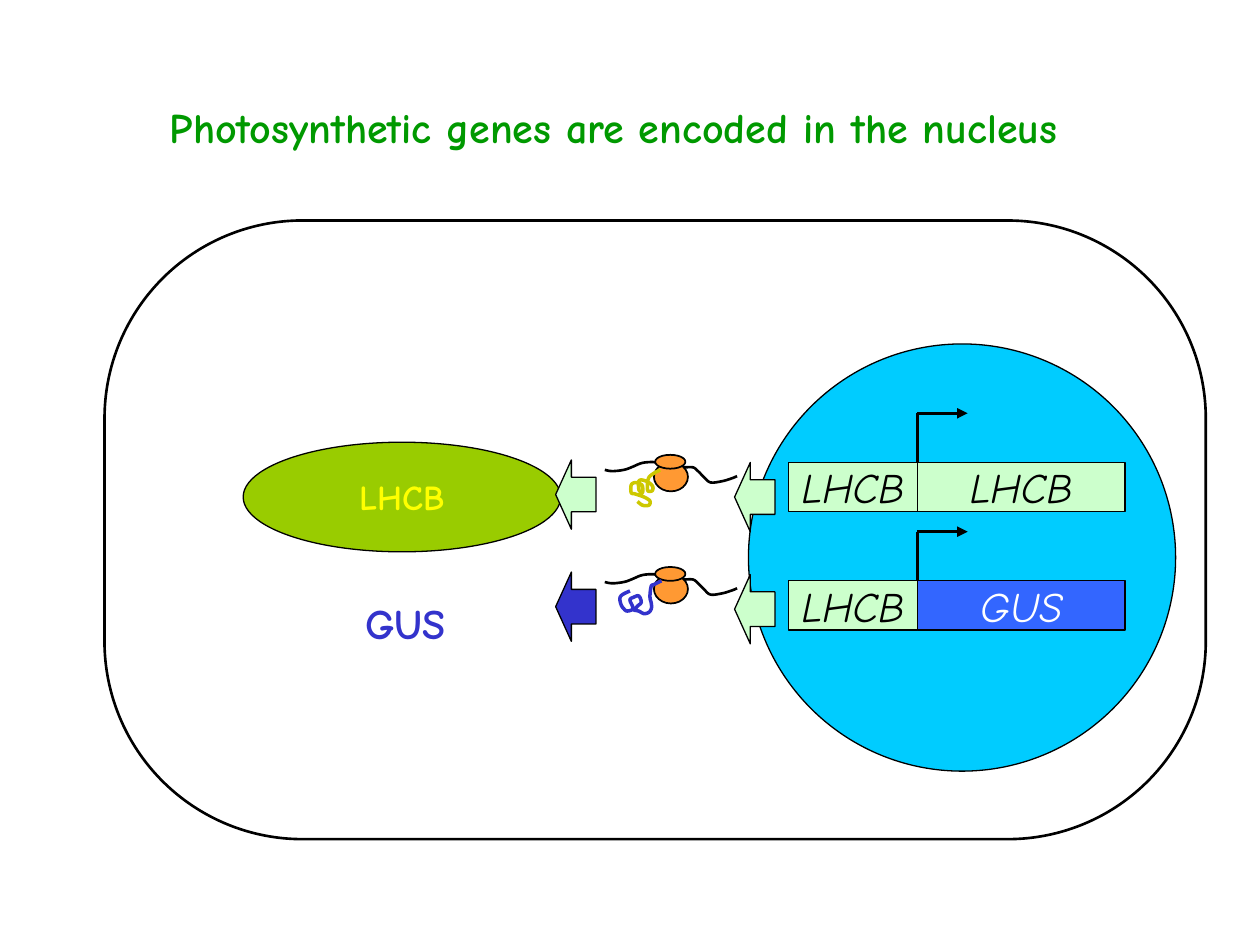
"""Draw a cell whose nucleus holds two gene constructs and their products."""
from dataclasses import dataclass
from typing import Optional

from lxml.etree import SubElement
from pptx import Presentation
from pptx.dml.color import RGBColor
from pptx.enum.shapes import MSO_CONNECTOR, MSO_SHAPE
from pptx.enum.text import MSO_ANCHOR, MSO_AUTO_SIZE, PP_ALIGN
from pptx.oxml.ns import qn
from pptx.util import Cm, Pt

FONT = "Comic Neue"
BLACK, WHITE, MINT, BLUE = "000000", "FFFFFF", "CCFFCC", "3333CC"
ORANGE = "FF9933"
INCH = 2.54

MRNA = [
    (4.8, 3.73), (4.86, 3.74), (4.95, 3.73), (5.01, 3.71), (5.08, 3.68),
    (5.13, 3.67), (5.2, 3.67), (5.26, 3.7), (5.3, 3.71), (5.42, 3.71),
    (5.5, 3.71), (5.54, 3.74), (5.59, 3.79), (5.64, 3.83), (5.73, 3.82),
    (5.8, 3.8), (5.85, 3.78),
]
LHCB_CHAIN = [
    (5.24, 3.73), (5.2, 3.75), (5.17, 3.77), (5.15, 3.79), (5.14, 3.83),
    (5.14, 3.89), (5.16, 3.9), (5.18, 3.89), (5.18, 3.86), (5.15, 3.83),
    (5.1, 3.81), (5.07, 3.82), (5.07, 3.88), (5.08, 3.9), (5.1, 3.91),
    (5.1, 3.86), (5.08, 3.84), (5.04, 3.83), (5.01, 3.85), (5.01, 3.91),
    (5.04, 3.92), (5.1, 3.94), (5.14, 3.96), (5.16, 3.98), (5.15, 4.01),
    (5.1, 4.01), (5.06, 3.98),
]
GUS_CHAIN = [
    (5.25, 4.61), (5.19, 4.64), (5.17, 4.65), (5.16, 4.71), (5.16, 4.75),
    (5.17, 4.79), (5.17, 4.83), (5.15, 4.86), (5.11, 4.87), (5.07, 4.85),
    (5.03, 4.84), (5.02, 4.81), (5, 4.76), (5.03, 4.74), (5.07, 4.73),
    (5.09, 4.78), (5.06, 4.81), (5.04, 4.83), (4.98, 4.85), (4.95, 4.83),
    (4.93, 4.8), (4.92, 4.75), (4.94, 4.72), (5, 4.69),
]


@dataclass
class Label:
    text: str
    color: str
    size: float = 24
    bold: bool = False
    italic: bool = False


@dataclass
class Row:
    gene: Label
    fill: str
    top: float
    drop: float
    arrow: str
    chain: list
    tint: str


def cm(inch: float) -> Cm:
    return Cm(inch * INCH)


def rgb(code: str) -> RGBColor:
    return RGBColor.from_string(code)


def write(frame, label: Label) -> None:
    run = frame.paragraphs[0].add_run()
    run.text = label.text
    font = run.font
    font.name, font.size = FONT, Pt(label.size)
    font.bold, font.italic = label.bold, label.italic
    font.color.rgb = rgb(label.color)


def add_text(slide, x: float, y: float, wide: float, label: Label) -> None:
    frame = slide.shapes.add_textbox(cm(x), cm(y), cm(wide), cm(0.5)).text_frame
    frame.word_wrap = True
    frame.auto_size = MSO_AUTO_SIZE.SHAPE_TO_FIT_TEXT
    write(frame, label)


def style(shape, fill: Optional[str], line: str, width: float) -> None:
    shape.shadow.inherit = False
    if fill:
        shape.fill.solid()
        shape.fill.fore_color.rgb = rgb(fill)
    else:
        shape.fill.background()
    shape.line.color.rgb = rgb(line)
    shape.line.width = Pt(width)


def add_shape(slide, kind: MSO_SHAPE, box: tuple, fill: Optional[str],
              width: float = 0.75, label: Optional[Label] = None):
    shape = slide.shapes.add_shape(kind, *map(cm, box))
    style(shape, fill, BLACK, width)
    if label:
        frame = shape.text_frame
        frame.word_wrap = False
        frame.vertical_anchor = MSO_ANCHOR.MIDDLE
        frame.paragraphs[0].alignment = PP_ALIGN.CENTER
        write(frame, label)
    return shape


def add_line(slide, start: tuple, end: tuple, head: bool = False) -> None:
    line = slide.shapes.add_connector(
        MSO_CONNECTOR.STRAIGHT, *map(cm, start + end))
    line.line.color.rgb = rgb(BLACK)
    line.line.width = Pt(2)
    if head:
        SubElement(line.line._get_or_add_ln(), qn("a:tailEnd"), type="triangle")
    SubElement(line._element.spPr, qn("a:effectLst"))


def smooth(dots: list, steps: int = 4) -> list:
    """Return points of a Catmull-Rom curve through the dots."""
    ends = [dots[0], *dots, dots[-1]]
    curve = [dots[0]]
    for a, b, c, d in zip(ends, ends[1:], ends[2:], ends[3:]):
        for step in range(1, steps + 1):
            t = step / steps
            curve.append(tuple(
                (2 * q + (r - p) * t + (2 * p - 5 * q + 4 * r - s) * t ** 2
                 + (3 * q - p - 3 * r + s) * t ** 3) / 2
                for p, q, r, s in zip(a, b, c, d)))
    return curve


def add_curve(slide, dots: list, color: str, width: float) -> None:
    first, *rest = [(cm(x), cm(y)) for x, y in smooth(dots)]
    pen = slide.shapes.build_freeform(*first)
    pen.add_line_segments(rest, close=False)
    style(pen.convert_to_shape(), None, color, width)


def add_arrow(slide, x: float, y: float, fill: str) -> None:
    arrow = add_shape(slide, MSO_SHAPE.LEFT_ARROW, (x, y, 0.32, 0.55), fill)
    arrow.adjustments[0], arrow.adjustments[1] = 0.5, 0.39


def add_gene(slide, row: Row) -> None:
    x, y = 7.28, row.top
    bend = y - 0.39
    add_shape(slide, MSO_SHAPE.RECTANGLE, (x, y, 1.65, 0.39), row.fill,
              label=row.gene)
    add_line(slide, (x, bend), (x, y))
    add_line(slide, (x, bend), (x + 0.4, bend), head=True)
    add_shape(slide, MSO_SHAPE.RECTANGLE, (6.26, y, 1.02, 0.39), MINT,
              label=Label("LHCB", BLACK, italic=True))


def add_route(slide, row: Row) -> None:
    drop = row.drop
    add_arrow(slide, 4.41, 3.65 + drop, row.arrow)
    add_curve(slide, [(x, y + drop) for x, y in MRNA], BLACK, 1.5)
    for box in ((5.19, 3.67 + drop, 0.27, 0.23), (5.2, 3.61 + drop, 0.24, 0.11)):
        add_shape(slide, MSO_SHAPE.OVAL, box, ORANGE, 1)
    add_curve(slide, row.chain, row.tint, 2)
    add_arrow(slide, 5.83, 3.67 + drop, MINT)


def main() -> None:
    deck = Presentation()
    deck.slide_width, deck.slide_height = cm(10), cm(7.5)
    slide = deck.slides.add_slide(deck.slide_layouts[6])
    add_text(slide, 1.25, 0.76, 8.42, Label(
        "Photosynthetic genes are encoded in the nucleus", "009900", bold=True))
    add_shape(slide, MSO_SHAPE.OVAL, (1.93, 3.51, 2.52, 0.87), "99CC00",
              label=Label("LHCB", "FFFF00", 20, bold=True))
    add_shape(slide, MSO_SHAPE.OVAL, (5.94, 2.73, 3.39, 3.39), "00CCFF")
    cell = add_shape(slide, MSO_SHAPE.ROUNDED_RECTANGLE,
                     (0.83, 1.75, 8.74, 4.91), None, 1.5)
    cell.adjustments[0] = 0.32
    add_text(slide, 2.8, 4.69, 1.26, Label("GUS", BLUE, bold=True))
    rows = (
        Row(Label("LHCB", BLACK, italic=True), MINT, 3.67, 0, MINT,
            LHCB_CHAIN, "CDC800"),
        Row(Label("GUS", WHITE, italic=True), "3366FF", 4.61, 0.89, BLUE,
            GUS_CHAIN, BLUE),
    )
    for row in rows:
        add_gene(slide, row)
        add_route(slide, row)
    deck.save("out.pptx")


if __name__ == "__main__":
    main()
